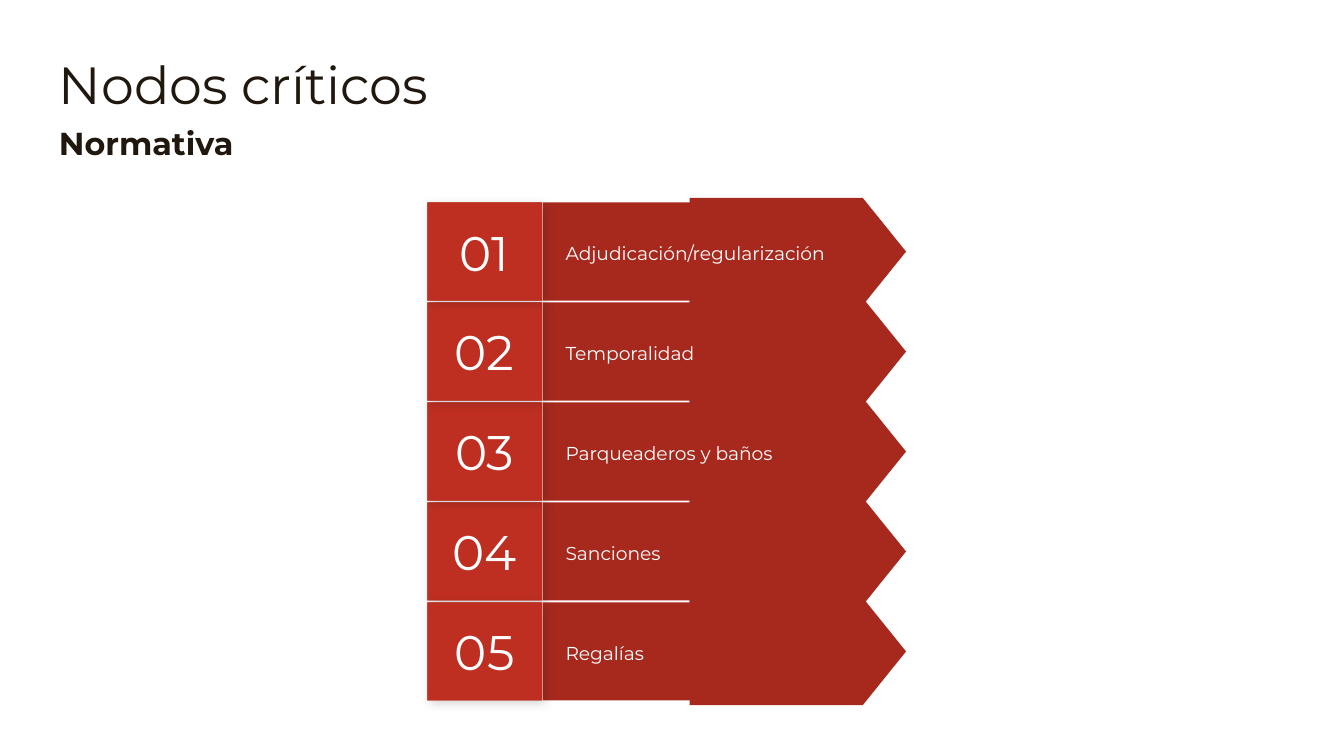
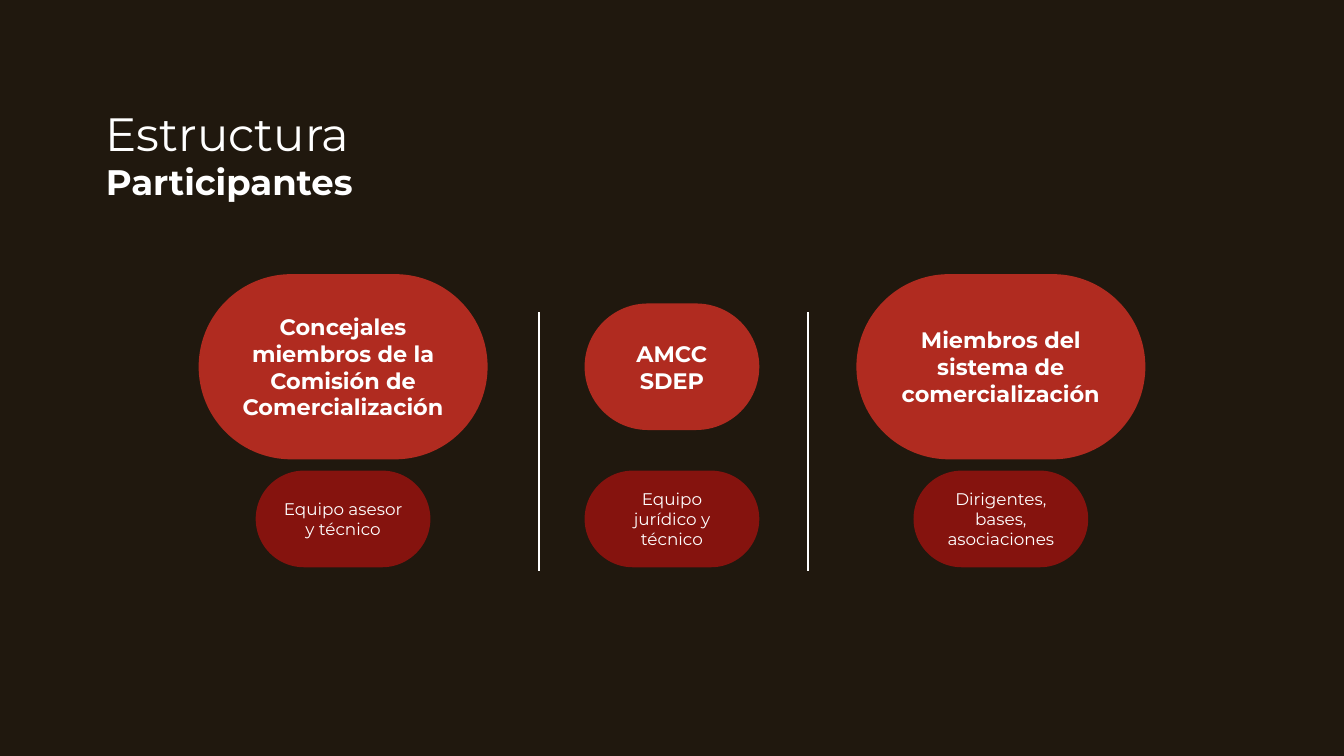
"""Build two slides on critical regulatory issues and participant structure."""
import lxml.etree
import pptx
import pptx.dml.color
import pptx.enum.shapes
import pptx.enum.text
import pptx.oxml.ns
import pptx.util

Pt = pptx.util.Pt
SHAPE = pptx.enum.shapes.MSO_SHAPE
ALIGN = pptx.enum.text.PP_ALIGN
ANCHOR = pptx.enum.text.MSO_ANCHOR
FONT = "Montserrat"
COLORS = {
    "white": "FFFFFF",
    "dark": "20180E",
    "band": "A7291E",
    "number": "BE2F22",
    "main": "B02B20",
    "support": "D80F0F",
    "shadow": "000000",
}


def rgb(name):
    return pptx.dml.color.RGBColor.from_string(COLORS[name])


def add_element(parent, tag, **attributes):
    name = pptx.oxml.ns.qn(tag)
    return lxml.etree.SubElement(parent, name, {key: str(value) for key, value in attributes.items()})


class SlideBuilder:
    """Hold the deck style and draw on the current slide or group."""

    def __init__(self):
        self.deck = pptx.Presentation()
        self.deck.slide_width = Pt(720)
        self.deck.slide_height = Pt(405)
        self.page = None
        self.shapes = None

    def add_page(self, background):
        self.page = self.deck.slides.add_slide(self.deck.slide_layouts[6])
        self.shapes = self.page.shapes
        fill = self.page.background.fill
        fill.solid()
        fill.fore_color.rgb = rgb(background)

    def start_group(self):
        self.shapes = self.page.shapes.add_group_shape().shapes

    def set_lines(self, box, lines, color, align=ALIGN.LEFT, anchor=ANCHOR.MIDDLE):
        frame = box.text_frame
        frame.word_wrap = True
        frame.vertical_anchor = anchor
        frame.margin_left = frame.margin_right = Pt(7.2)
        frame.margin_top = frame.margin_bottom = Pt(7.2)
        frame.text = "\n".join(line[0] for line in lines)
        for para, (_, size, bold, spacing) in zip(frame.paragraphs, lines):
            para.alignment = align
            para.line_spacing = spacing
            for span in para.runs:
                span.font.name = FONT
                span.font.size = Pt(size)
                span.font.bold = bold
                span.font.color.rgb = rgb(color)

    def text(self, left, top, width, height, lines, color, anchor=ANCHOR.MIDDLE):
        box = self.shapes.add_textbox(Pt(left), Pt(top), Pt(width), Pt(height))
        self.set_lines(box, lines, color, anchor=anchor)
        return box

    def title(self, left, top, width, height, lines, color):
        box = self.text(left, top, width, height, lines, color, ANCHOR.TOP)
        box.text_frame.auto_size = pptx.enum.text.MSO_AUTO_SIZE.SHAPE_TO_FIT_TEXT

    def shape(self, kind, left, top, width, height, fill, lines=(), opacity=100):
        box = self.shapes.add_shape(kind, Pt(left), Pt(top), Pt(width), Pt(height))
        box.shadow.inherit = False
        box.line.fill.background()
        box.fill.solid()
        box.fill.fore_color.rgb = rgb(fill)
        if opacity < 100:
            color = box._element.spPr.find(".//" + pptx.oxml.ns.qn("a:srgbClr"))
            add_element(color, "a:alpha", val=opacity * 1000)
        if lines:
            self.set_lines(box, lines, "white", ALIGN.CENTER)
        return box

    def cast_shadow(self, box):
        effects = box._element.spPr.find(pptx.oxml.ns.qn("a:effectLst"))
        shadow = add_element(effects, "a:outerShdw", blurRad=Pt(5.6), dist=Pt(2.2),
                             dir=45 * 60000, algn="ctr", rotWithShape=0)
        color = add_element(shadow, "a:srgbClr", val=COLORS["shadow"])
        add_element(color, "a:alpha", val=17000)

    def pill(self, center_x, center_y, width, height, fill, lines, opacity=100):
        box = self.shape(SHAPE.ROUNDED_RECTANGLE, center_x - width / 2, center_y - height / 2,
                         width, height, fill, lines, opacity)
        box.adjustments[0] = 0.5

    def divider(self, x, top, bottom):
        line = self.shapes.add_connector(pptx.enum.shapes.MSO_CONNECTOR.STRAIGHT,
                                         Pt(x), Pt(top), Pt(x), Pt(bottom))
        line.line.color.rgb = rgb("white")
        line.line.width = Pt(0.75)
        add_element(line._element.spPr, "a:effectLst")

    def issue_row(self, number, label, top, height):
        middle = top + height / 2
        arrow_width, arrow_length, label_height = 57.6, 116, 40.3
        number_box = (229, top, 61.4, height)
        self.start_group()
        self.shape(SHAPE.RECTANGLE, 290.7, top, 164.2, height, "band")
        arrow = self.shape(SHAPE.FLOWCHART_OFFPAGE_CONNECTOR, 427.4 - arrow_width / 2,
                           middle - arrow_length / 2, arrow_width, arrow_length, "band")
        arrow.rotation = 270
        self.text(295.9, middle - label_height / 2, 172.8, label_height,
                  [(label, 10, False, 1.15)], "white")
        self.cast_shadow(self.shape(SHAPE.RECTANGLE, *number_box, "main"))
        self.shape(SHAPE.RECTANGLE, *number_box, "number", [(f"{number:02}", 26, False, 1.0)])


def build_issues(builder):
    builder.add_page("white")
    builder.title(24.5, 23, 238.3, 69.1,
                  [("Nodos críticos", 28, False, 0.96), ("Normativa", 17, True, 1.2)], "dark")
    issues = ["Adjudicación/regularización", "Temporalidad", "Parqueaderos y baños",
              "Sanciones", "Regalías"]
    for index in (3, 2, 1, 4, 0):
        builder.issue_row(index + 1, issues[index], 108.5 + 53.55 * index, 52.6)


def build_participants(builder):
    builder.add_page("dark")
    builder.title(49.7, 51.1, 236.2, 67.7,
                  [("Estructura", 25, False, 0.96), ("Participantes", 19, True, 0.96)], "white")
    large, small = (154.8, 99.2), (93.6, 67.8)
    participants = [
        (large, ["Concejales miembros de la Comisión de Comercialización"], "Equipo asesor y técnico"),
        (small, ["AMCC", "SDEP"], "Equipo jurídico y técnico"),
        (large, ["Miembros del sistema de comercialización"], "Dirigentes, bases, asociaciones"),
    ]
    for index, (size, names, team) in enumerate(participants):
        center = 360 + 176.2 * (index - 1)
        builder.pill(center, 196.5, *size, "main", [(name, 12, True, 1.0) for name in names])
        builder.pill(center, 278, 93.6, 51.8, "support", [(team, 9, False, 1.0)], 55)
    for x in (288.7, 432.9):
        builder.divider(x, 167.4, 306)


def main():
    builder = SlideBuilder()
    build_issues(builder)
    build_participants(builder)
    builder.deck.save("out.pptx")


if __name__ == "__main__":
    main()
